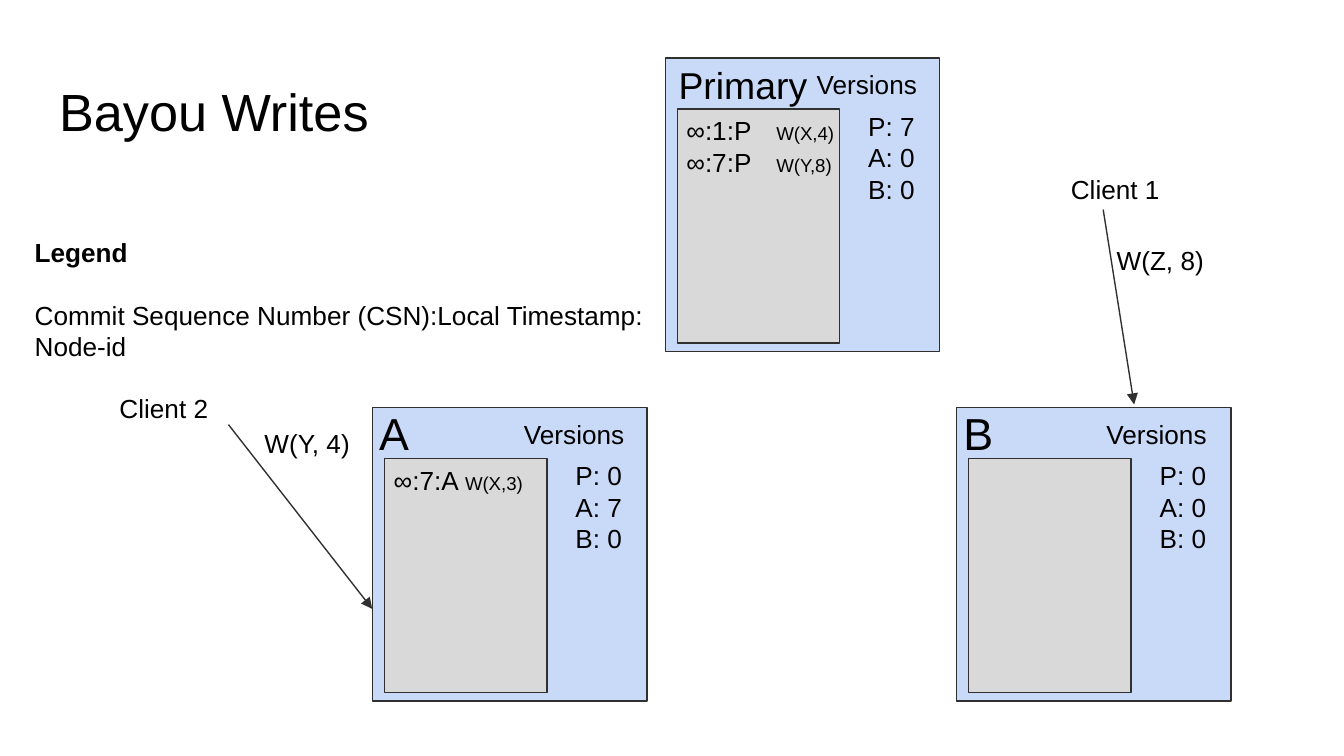
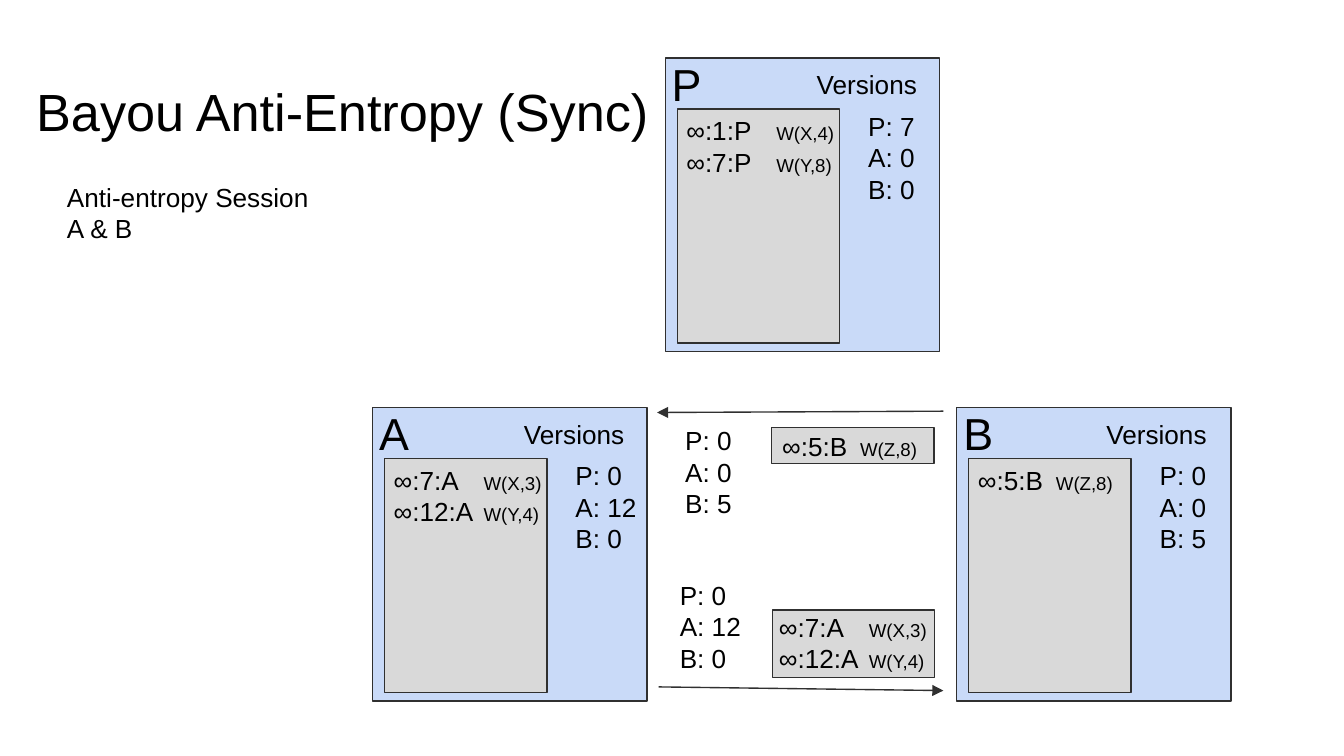
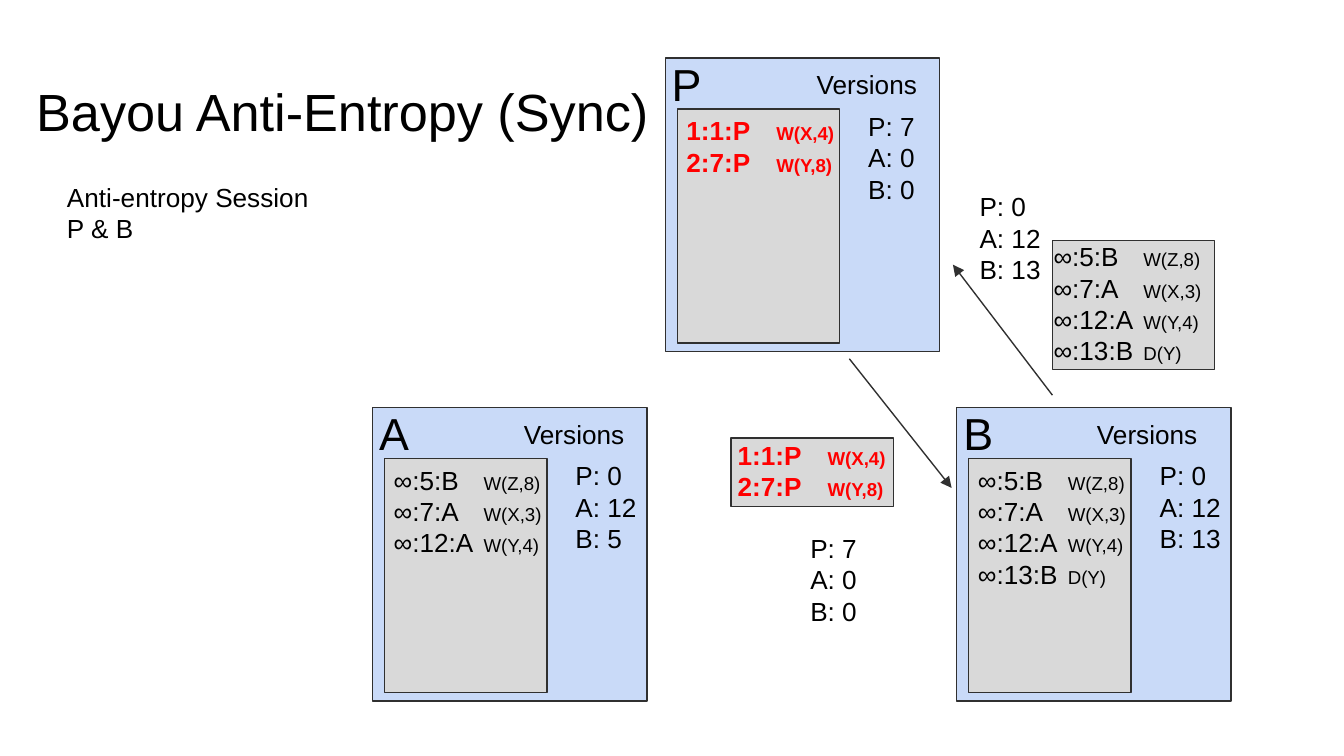
from lxml.etree import SubElement
from pptx import Presentation
from pptx.dml.color import RGBColor
from pptx.enum.shapes import MSO_CONNECTOR as Link, MSO_SHAPE as Shape
from pptx.enum.text import MSO_ANCHOR as Anchor, MSO_AUTO_SIZE as Fit, PP_ALIGN as Align
from pptx.oxml.ns import qn
from pptx.util import Pt

FONT = "Arial"
BLACK, RED, EDGE = "000000", "FF0000", "303030"
BLUE, GREY = "C9DAF8", "D9D9D9"
PAD = 7.2
NODE_W, NODE_H = 147, 157.5
LOG_W, LOG_H = 87, 125.5
TOP, LEFT, RIGHT = (356.4, 31), (199.6, 218.2), (512.6, 218.2)

P_LOG = ["∞:1:P W(X,4)", "∞:7:P W(Y,8)"]
P_DONE = ["1:1:P W(X,4)", "2:7:P W(Y,8)"]
A_LOG = ["∞:7:A W(X,3)", "∞:12:A W(Y,4)"]
B_LOG = ["∞:5:B W(Z,8)"]
B_FULL = B_LOG + A_LOG + ["∞:13:B D(Y)"]


def paint(target, color):
    """Give a fill or a font a solid colour from a hex string."""
    if hasattr(target, "solid"):
        target.solid()
        target.fore_color.rgb = RGBColor.from_string(color)
    else:
        target.color.rgb = RGBColor.from_string(color)


def style(run, size, color=BLACK, bold=False):
    font = run.font
    font.name, font.size, font.bold = FONT, Pt(size), bold
    paint(font, color)


def fill_text(shape, words, size, align=Align.LEFT):
    frame = shape.text_frame
    frame.auto_size = Fit.NONE
    frame.word_wrap = True
    frame.vertical_anchor = Anchor.TOP
    frame.margin_left = frame.margin_right = Pt(PAD)
    frame.margin_top = frame.margin_bottom = Pt(PAD)
    frame.text = words
    for para in frame.paragraphs:
        para.alignment = align
        for run in para.runs:
            style(run, size)
    return frame


def text(shapes, box, words, size=14, align=Align.LEFT):
    return fill_text(shapes.add_textbox(*map(Pt, box)), words, size, align)


def rect(shapes, box, color):
    shape = shapes.add_shape(Shape.RECTANGLE, *map(Pt, box))
    shape.shadow.inherit = False
    paint(shape.fill, color)
    paint(shape.line.fill, EDGE)
    shape.line.width = Pt(0.75)


def arrow(shapes, start, end):
    line = shapes.add_connector(Link.STRAIGHT, *map(Pt, start + end))
    paint(line.line.fill, EDGE)
    line.line.width = Pt(0.75)
    props = line._element.spPr
    SubElement(props.find(qn("a:ln")), qn("a:tailEnd"), type="triangle")
    SubElement(props, qn("a:effectLst"))


def counts(shapes, x, y, p, a, b):
    """Version vector of the three nodes."""
    text(shapes, (x, y, 52, 62), f"P: {p}\nA: {a}\nB: {b}")


def log(shapes, box, items, shift, tab=48.2):
    """Grey box of writes; committed ones are bold red."""
    rect(shapes, box, GREY)
    x, y, w, h = box
    dx, dy = shift
    stamps, writes = zip(*(item.split() for item in items)) if items else ((), ())
    if not items:
        return
    frame = text(shapes, (x + dx, y + dy, w + 9, h), "\n".join(stamps))
    frame.margin_right = 0
    for para, stamp, write in zip(frame.paragraphs, stamps, writes):
        done = not stamp.startswith("∞")
        look = (RED if done else BLACK, done)
        style(para.runs[0], 14, *look)
        run = para.add_run()
        run.text = "\t" + write
        style(run, 10, *look)
        tabs = SubElement(para._p.get_or_add_pPr(), qn("a:tabLst"))
        SubElement(tabs, qn("a:tab"), pos=str(Pt(tab)), algn="l")


def node(slide, spot, name, vector, items, tab=48.2, mid=108):
    """Server with its name, write log and version vector."""
    x, y = spot
    shapes = slide.shapes.add_group_shape().shapes
    rect(shapes, (x, y, NODE_W, NODE_H), BLUE)
    log(shapes, (x + 6.4, y + 27.4, LOG_W, LOG_H), items, (-2.2, -4.2), tab)
    counts(shapes, x + 101.6, y + 20.9, *vector)
    text(shapes, (x + mid - 39, y - 1.5, 78, 26), "Versions", 14, Align.CENTER)
    if len(name) > 1:
        text(shapes, (x, y - 5, 90, 29), name, 20)
    else:
        text(shapes, (x - 3.6, y - 7.9, 33, 38), name, 24)


def start(deck, words, x, w):
    """Add a slide with its title."""
    slide = deck.slides.add_slide(deck.slide_layouts[5])
    title = slide.shapes.title
    title.left, title.top, title.width, title.height = map(Pt, (x, 35.3, w, 45.4))
    fill_text(title, words, 28)
    return slide


def client(shapes, spot, name, write, gap):
    """Client label, and its write at a gap from it."""
    x, y = spot
    text(shapes, (x, y, 70, 30), name)
    text(shapes, (x + gap[0], y + gap[1], 99, 47), write)


def writes(deck):
    slide = start(deck, "Bayou Writes", 24.5, 260)
    shapes = slide.shapes
    node(slide, TOP, "Primary", (7, 0, 0), P_LOG)
    node(slide, LEFT, "A", (0, 7, 0), A_LOG[:1], 38.2)
    node(slide, RIGHT, "B", (0, 0, 0), [], mid=107)
    client(shapes, (566.6, 85.7), "Client 1", "W(Z, 8)", (24.5, 38.2))
    arrow(shapes, (591, 112.3), (607.6, 216.7))
    client(shapes, (56.9, 203), "Client 2", "W(Y, 4)", (77.7, 18.7))
    arrow(shapes, (122.4, 227.5), (199.4, 326.2))
    frame = text(shapes, (11.5, 119.5, 341.3, 83.5),
                 "Legend\nCommit Sequence Number (CSN):Local Timestamp: Node-id")
    head = frame.paragraphs[0]
    head.space_after = Pt(16.8)
    head.runs[0].font.bold = True


def session(deck, pair):
    slide = start(deck, "Bayou Anti-Entropy (Sync)", 12.2, 349)
    text(slide.shapes, (28.8, 90, 148, 52), f"Anti-entropy Session\n{pair}")
    return slide


def sync_ab(deck):
    slide = session(deck, "A & B")
    shapes = slide.shapes
    node(slide, TOP, "P", (7, 0, 0), P_LOG)
    node(slide, LEFT, "A", (0, 12, 0), A_LOG)
    node(slide, RIGHT, "B", (0, 0, 5), B_LOG, 41.8, 107)
    arrow(shapes, (505.4, 220.3), (352, 221))
    arrow(shapes, (352.8, 368), (505.4, 370))
    log(shapes, (413.3, 229, LOG_W, 19.4), B_LOG, (-1.4, -5.8), 41.8)
    log(shapes, (413.8, 326.9, LOG_W, 36), A_LOG, (-3.6, -6.5))
    counts(shapes, 357.1, 303.1, 0, 12, 0)
    counts(shapes, 360, 220.3, 0, 0, 5)


def sync_pb(deck):
    slide = session(deck, "P & B")
    shapes = slide.shapes
    node(slide, TOP, "P", (7, 0, 0), P_DONE)
    node(slide, LEFT, "A", (0, 12, 5), B_LOG + A_LOG)
    node(slide, RIGHT, "B", (0, 12, 13), B_FULL, mid=102)
    arrow(shapes, (563.8, 211.7), (510.5, 141.8))
    arrow(shapes, (455, 192.2), (509.8, 261.4))
    log(shapes, (391.7, 234.7, LOG_W, 36.7), P_DONE, (-3.6, -6.5))
    counts(shapes, 427, 277.9, 7, 0, 0)
    log(shapes, (563.8, 128.9, LOG_W, 69.1), B_FULL, (-6.5, -7.2))
    counts(shapes, 517.7, 95, 0, 12, 13)


def main():
    deck = Presentation()
    deck.slide_width, deck.slide_height = Pt(720), Pt(405)
    for build in (writes, sync_ab, sync_pb):
        build(deck)
    deck.save("out.pptx")


if __name__ == "__main__":
    main()
